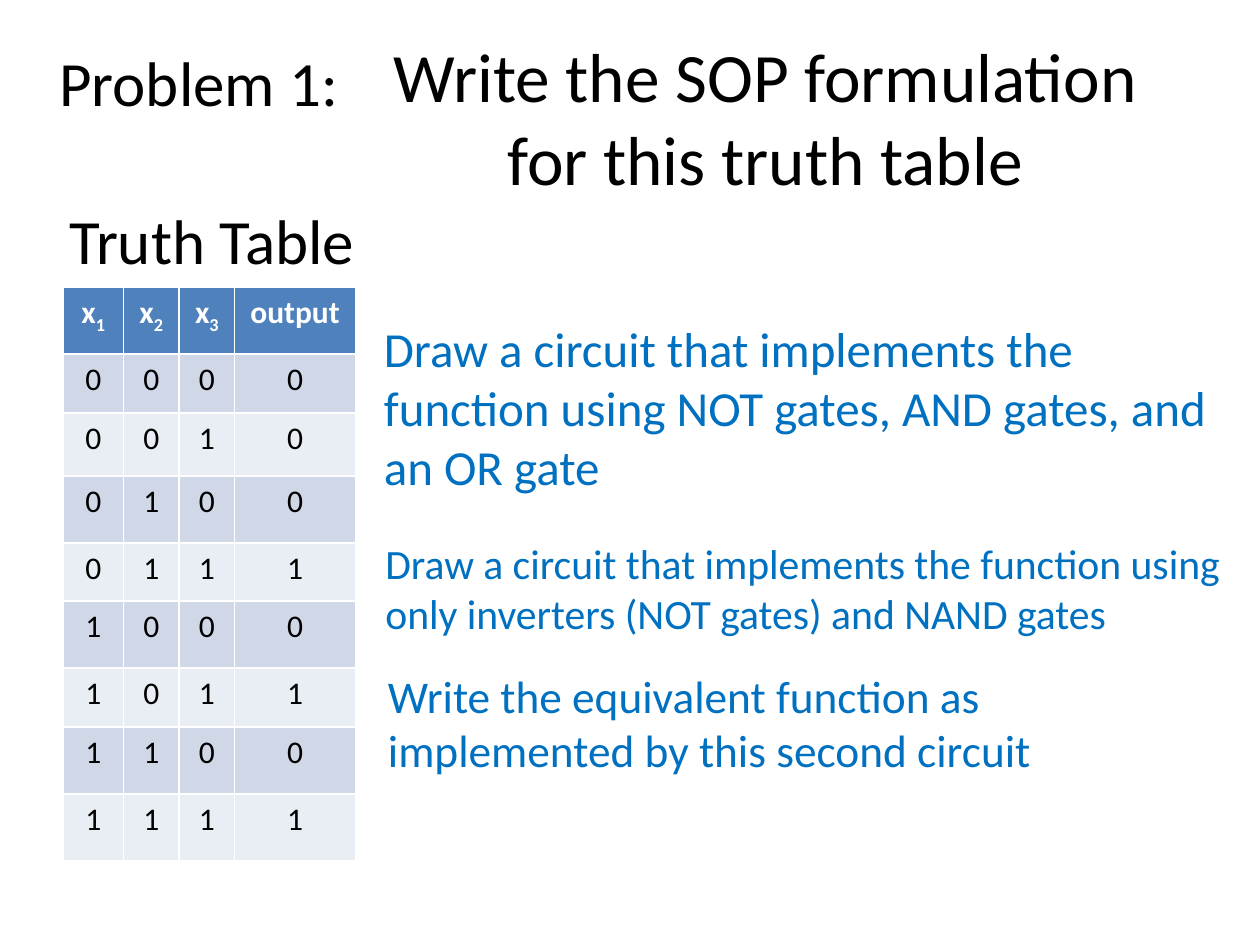
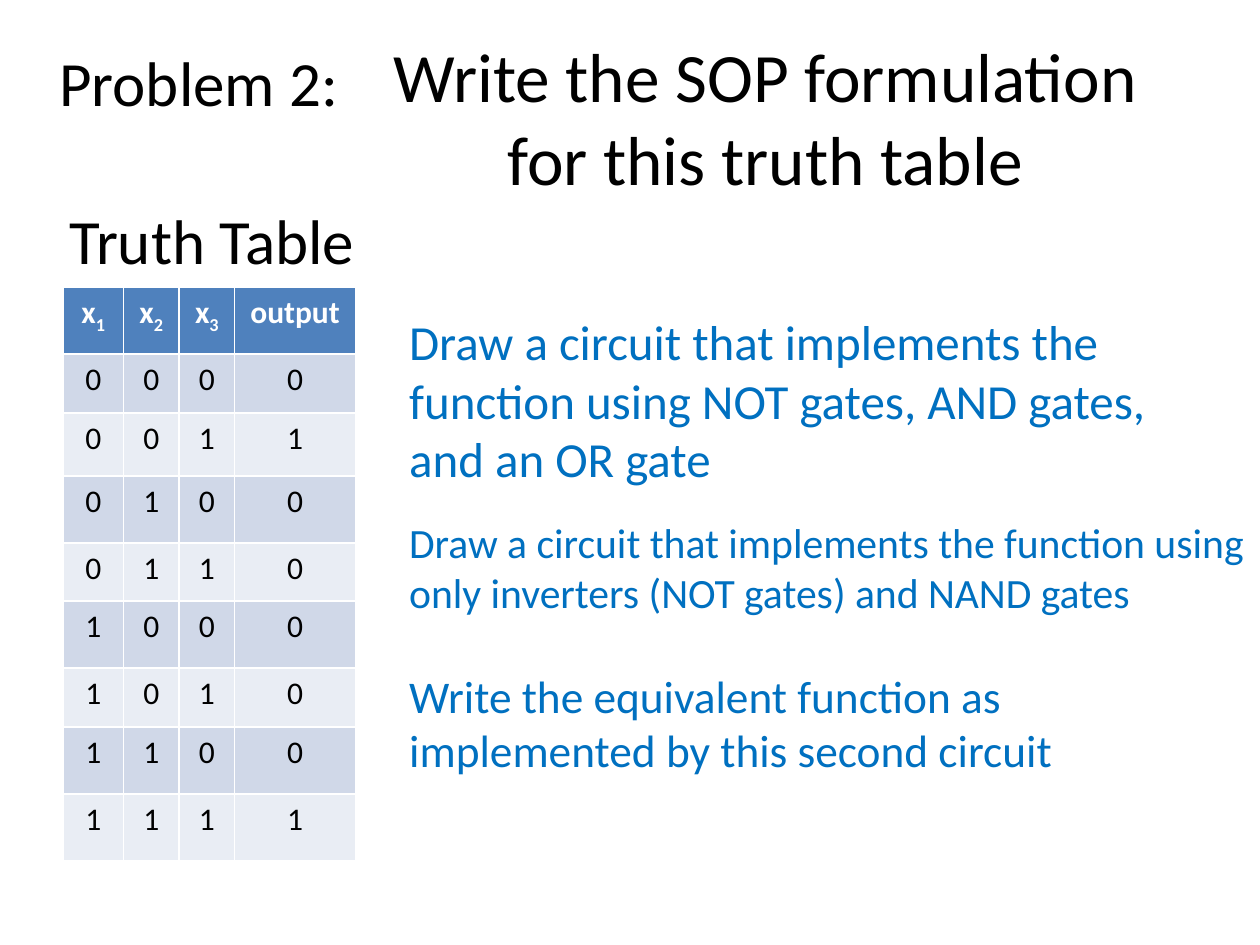
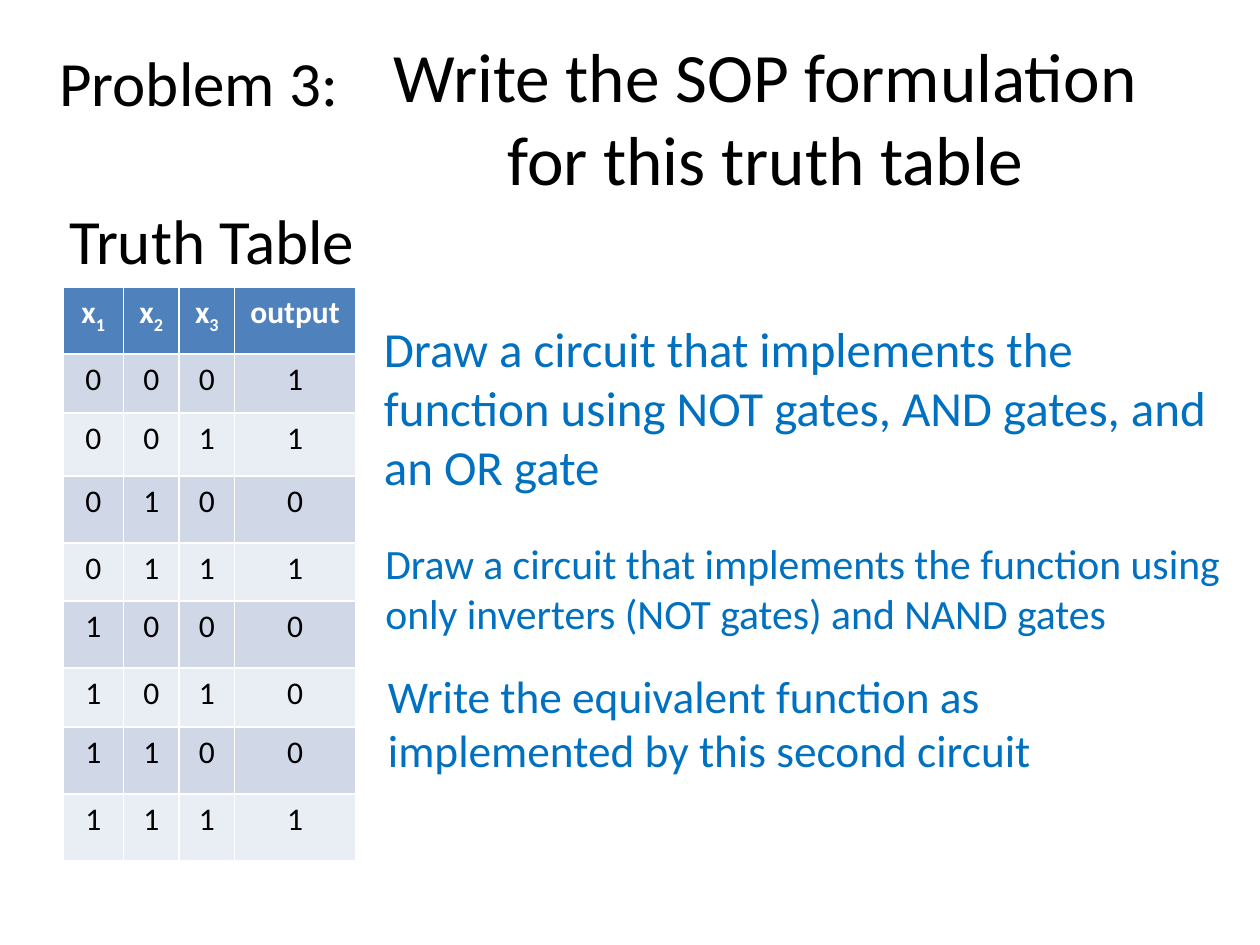
from itertools import product
from typing import NamedTuple

from lxml import etree
from pptx import Presentation
from pptx import util as u
from pptx.dml.color import RGBColor
from pptx.enum import text
from pptx.oxml import ns

FONT = "Calibri"
BLACK, WHITE, BLUE = "000000", "FFFFFF", "0070C0"
HEADER_FILL = "4F81BD"
BAND_FILLS = ("D0D8E8", "E9EDF4")

TITLE = "Write the SOP formulation for this truth table"
HEADERS = (("x", "1"), ("x", "2"), ("x", "3"), ("output", ""))
COL_WIDTHS = (1.22, 1.12, 1.12, 2.44)
ROW_HEIGHTS = (1.35, 1.19, 1.27, 1.35, 1.17, 1.35, 1.19, 1.35, 1.35)


class Box(NamedTuple):
    """Left, top, width and height in centimetres."""
    left: float
    top: float
    width: float
    height: float

    def lengths(self) -> list[u.Cm]:
        return [u.Cm(v) for v in self]


class Task(NamedTuple):
    text: str
    size: float


class Problem(NamedTuple):
    outputs: str
    task_boxes: tuple[Box, ...]


TITLE_BOX = Box(6.73, 0.76, 17.4, 3.18)
NUMBER_BOX = Box(0.66, 0.76, 6.5, 1.8)
CAPTION_BOX = Box(0.86, 3.94, 6.68, 1.8)
TABLE_BOX = Box(1.27, 5.79, sum(COL_WIDTHS), sum(ROW_HEIGHTS))

TASKS = (
    Task("Draw a circuit that implements the function using NOT gates, "
         "AND gates, and an OR gate", 28),
    Task("Draw a circuit that implements the function using only inverters "
         "(NOT gates) and NAND gates", 23.8),
    Task("Write the equivalent function as implemented by this second circuit", 25.9),
)
USUAL_BOXES = (Box(7.49, 6.3, 17.4, 3.86), Box(7.52, 10.72, 17.4, 2.34),
               Box(7.57, 13.34, 17.4, 2.34))
ALIGNED_BOXES = (Box(8, 6.15, 16.51, 3.86), Box(8, 10.29, 17.4, 2.79),
                 Box(8, 13.34, 16.97, 2.34))

# One output for each input row from 000 to 111
PROBLEMS = (
    Problem("00010101", USUAL_BOXES),
    Problem("01000001", ALIGNED_BOXES),
    Problem("11010001", USUAL_BOXES),
)


def rgb(color: str) -> RGBColor:
    return RGBColor.from_string(color)


def write(p, content: str, *, size: float, color: str = BLACK,
          bold: bool = False, subscript: bool = False) -> None:
    """Append a formatted run to paragraph p."""
    r = p.add_run()
    r.text = content
    r.font.name, r.font.size, r.font.bold = FONT, u.Pt(size), bold
    r.font.color.rgb = rgb(color)
    if subscript:
        r._r.get_or_add_rPr().set("baseline", "-25000")


def add_label(slide, box: Box, content: str) -> None:
    tf = slide.shapes.add_textbox(*box.lengths()).text_frame
    tf.word_wrap = False
    tf.auto_size = text.MSO_AUTO_SIZE.SHAPE_TO_FIT_TEXT
    write(tf.paragraphs[0], content, size=36)


def add_task(slide, box: Box, task: Task) -> None:
    tf = slide.shapes.add_textbox(*box.lengths()).text_frame
    tf.word_wrap = True
    p = tf.paragraphs[0]
    before = etree.SubElement(p._p.get_or_add_pPr(), ns.qn("a:spcBef"))
    etree.SubElement(before, ns.qn("a:spcPct")).set("val", "20000")
    write(p, task.text, size=task.size, color=BLUE)


def centred_paragraph(cell, fill: str):
    """Fill the cell and return its paragraph."""
    cell.fill.solid()
    cell.fill.fore_color.rgb = rgb(fill)
    p = cell.text_frame.paragraphs[0]
    p.alignment = text.PP_ALIGN.CENTER
    return p


def add_truth_table(slide, outputs: str) -> None:
    table = slide.shapes.add_table(
        len(ROW_HEIGHTS), len(COL_WIDTHS), *TABLE_BOX.lengths()).table
    for column, width in zip(table.columns, COL_WIDTHS):
        column.width = u.Cm(width)
    for row, height in zip(table.rows, ROW_HEIGHTS):
        row.height = u.Cm(height)

    for col, (name, index) in enumerate(HEADERS):
        p = centred_paragraph(table.cell(0, col), HEADER_FILL)
        write(p, name, size=18, color=WHITE, bold=True)
        if index:
            write(p, index, size=18, color=WHITE, bold=True, subscript=True)

    for row, (inputs, output) in enumerate(zip(product("01", repeat=3), outputs)):
        for col, bit in enumerate((*inputs, output)):
            p = centred_paragraph(table.cell(row + 1, col), BAND_FILLS[row % 2])
            write(p, bit, size=18)


def add_title(slide) -> None:
    sp = slide.shapes.title
    sp.left, sp.top, sp.width, sp.height = TITLE_BOX.lengths()
    tf = sp.text_frame
    tf.auto_size = text.MSO_AUTO_SIZE.NONE
    tf.vertical_anchor = text.MSO_ANCHOR.MIDDLE
    p = tf.paragraphs[0]
    p.alignment = text.PP_ALIGN.CENTER
    write(p, TITLE, size=39.6)


def add_problem(prs, number: int, problem: Problem) -> None:
    slide = prs.slides.add_slide(prs.slide_layouts.get_by_name("Title Only"))
    add_title(slide)
    add_label(slide, CAPTION_BOX, " Truth Table")
    add_truth_table(slide, problem.outputs)
    add_label(slide, NUMBER_BOX, f" Problem {number}:")
    for box, task in zip(problem.task_boxes, TASKS):
        add_task(slide, box, task)


def main() -> None:
    prs = Presentation()
    prs.slide_width, prs.slide_height = u.Cm(25.4), u.Cm(19.05)
    for number, problem in enumerate(PROBLEMS, start=1):
        add_problem(prs, number, problem)
    prs.save("out.pptx")


if __name__ == "__main__":
    main()
